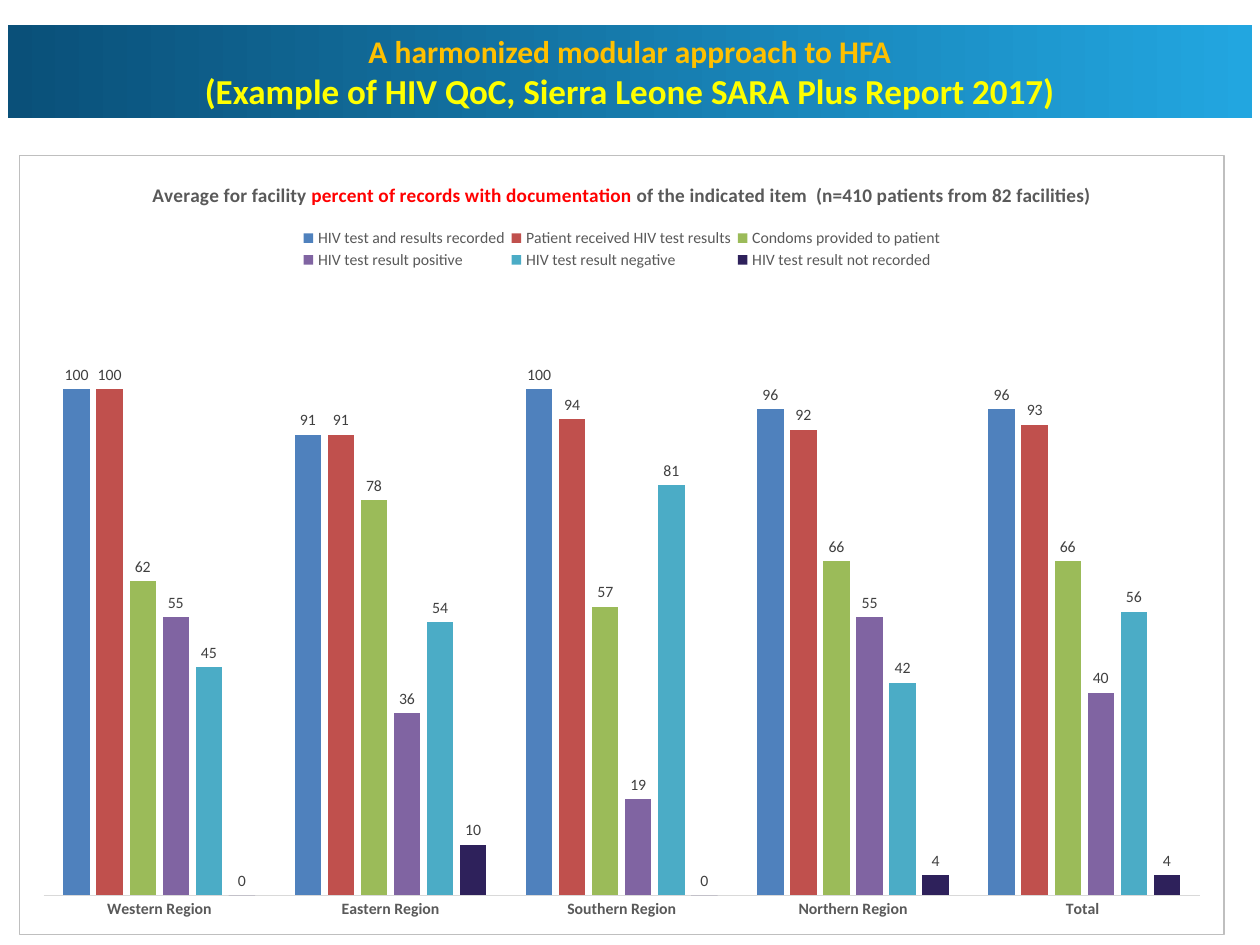
from dataclasses import dataclass

from pptx import Presentation
from pptx.chart.chart import Chart
from pptx.chart.data import CategoryChartData
from pptx.dml.color import RGBColor
from pptx.enum.chart import XL_CHART_TYPE as ChartType
from pptx.enum.chart import XL_LABEL_POSITION as LabelPosition
from pptx.enum.chart import XL_LEGEND_POSITION as LegendPosition
from pptx.enum.chart import XL_TICK_MARK as TickMark
from pptx.enum.text import MSO_ANCHOR as Anchor
from pptx.enum.text import MSO_AUTO_SIZE as AutoSize
from pptx.enum.text import PP_ALIGN as Align
from pptx.oxml import parse_xml
from pptx.oxml.ns import nsdecls, qn
from pptx.util import Inches, Pt


@dataclass(frozen=True)
class Theme:
    font: str = "Calibri"
    banner_start: str = "0A5079"
    banner_end: str = "22A6E0"
    heading: str = "FFC000"
    subheading: str = "FFFF00"
    emphasis: str = "FF0000"
    muted: str = "595959"
    value: str = "404040"
    axis: str = "D9D9D9"
    border: str = "BFBFBF"
    panel: str = "FFFFFF"
    heading_size: float = 18
    subheading_size: float = 20
    chart_title_size: float = 11
    chart_size: float = 10
    label_size: float = 9


@dataclass(frozen=True)
class Indicator:
    name: str
    percents: tuple[int, ...]
    color: str


THEME = Theme()
REGIONS = ("Western Region", "Eastern Region", "Southern Region", "Northern Region", "Total ")
INDICATORS = (
    Indicator("HIV test and results recorded", (100, 91, 100, 96, 96), "4F81BD"),
    Indicator("Patient received HIV test results", (100, 91, 94, 92, 93), "C0504D"),
    Indicator("Condoms provided to patient", (62, 78, 57, 66, 66), "9BBB59"),
    Indicator("HIV test result positive", (55, 36, 19, 55, 40), "8064A2"),
    Indicator("HIV test result negative", (45, 54, 81, 42, 56), "4BACC6"),
    Indicator("HIV test result not recorded", (0, 10, 0, 4, 4), "2E215B"),
)


def format_font(font, *, size: float, color: str, bold: bool = False) -> None:
    font.name = THEME.font
    font.size = Pt(size)
    font.bold = bold
    font.color.rgb = RGBColor.from_string(color)


def add_text(paragraph, text: str, *, size: float, color: str, bold: bool = True) -> None:
    paragraph.alignment = Align.CENTER
    run = paragraph.add_run()
    run.text = text
    format_font(run.font, size=size, color=color, bold=bold)


def layout_xml(x: float, y: float, w: float, h: float, target: str = ""):
    return parse_xml(
        f'<c:layout {nsdecls("c")}><c:manualLayout>{target}'
        '<c:xMode val="edge"/><c:yMode val="edge"/>'
        f'<c:x val="{x}"/><c:y val="{y}"/><c:w val="{w}"/><c:h val="{h}"/>'
        "</c:manualLayout></c:layout>"
    )


def draw_banner(banner) -> None:
    banner.left, banner.top = Inches(0.06), Inches(0.2)
    banner.width, banner.height = Inches(9.88), Inches(0.74)
    banner.fill.gradient()
    banner.fill.gradient_angle = 0
    for stop, color, position in zip(
        banner.fill.gradient_stops, (THEME.banner_start, THEME.banner_end), (0, 1)
    ):
        stop.color.rgb = RGBColor.from_string(color)
        stop.position = position
    frame = banner.text_frame
    frame.auto_size = AutoSize.NONE
    frame.word_wrap = True
    frame.vertical_anchor = Anchor.MIDDLE
    add_text(frame.paragraphs[0], "A harmonized modular approach to HFA",
             size=THEME.heading_size, color=THEME.heading)
    add_text(frame.add_paragraph(), "(Example of HIV QoC, Sierra Leone SARA Plus Report 2017)",
             size=THEME.subheading_size, color=THEME.subheading)


def style_panel(chart: Chart) -> None:
    chart.element.find(qn("c:chart")).addnext(parse_xml(
        f'<c:spPr {nsdecls("c", "a")}>'
        f'<a:solidFill><a:srgbClr val="{THEME.panel}"/></a:solidFill>'
        f'<a:ln w="{Pt(0.75)}"><a:solidFill><a:srgbClr val="{THEME.border}"/></a:solidFill></a:ln>'
        "</c:spPr>"
    ))
    plot_area = chart.element.find(".//" + qn("c:plotArea"))
    for automatic in plot_area.findall(qn("c:layout")):
        plot_area.remove(automatic)
    plot_area.insert(0, layout_xml(0.02, 0.17, 0.96, 0.78, '<c:layoutTarget val="inner"/>'))


def style_legend(chart: Chart) -> None:
    chart.has_legend = True
    legend = chart.legend
    legend.position = LegendPosition.TOP
    legend.include_in_layout = False
    format_font(legend.font, size=THEME.label_size, color=THEME.muted)
    position = chart.element.find(".//" + qn("c:legendPos"))
    for automatic in position.getparent().findall(qn("c:layout")):
        position.getparent().remove(automatic)
    position.addnext(layout_xml(0.23, 0.09, 0.54, 0.06))


def style_axes(chart: Chart) -> None:
    regions, percents = chart.category_axis, chart.value_axis
    regions.major_tick_mark = regions.minor_tick_mark = TickMark.NONE
    regions.format.line.color.rgb = RGBColor.from_string(THEME.axis)
    regions.format.line.width = Pt(0.75)
    format_font(regions.tick_labels.font, size=THEME.label_size, color=THEME.muted, bold=True)
    percents.visible = False
    percents.has_major_gridlines = False
    percents.minimum_scale, percents.maximum_scale = 0, 120


def draw_chart(slide) -> None:
    data = CategoryChartData()
    data.categories = REGIONS
    for indicator in INDICATORS:
        data.add_series(indicator.name, indicator.percents)
    chart = slide.shapes.add_chart(
        ChartType.COLUMN_CLUSTERED, Inches(0.15), Inches(1.23), Inches(9.57), Inches(6.19), data
    ).chart
    format_font(chart.font, size=THEME.chart_size, color="000000")

    chart.has_title = True
    heading = chart.chart_title.text_frame.paragraphs[0]
    for text, color in (
        ("Average for facility ", THEME.muted),
        ("percent of records with documentation", THEME.emphasis),
        (" of the indicated item  (n=410 patients from 82 facilities)", THEME.muted),
    ):
        add_text(heading, text, size=THEME.chart_title_size, color=color)

    columns = chart.plots[0]
    columns.gap_width, columns.overlap = 150, -25
    columns.vary_by_categories = False
    for series, indicator in zip(columns.series, INDICATORS):
        series.format.fill.solid()
        series.format.fill.fore_color.rgb = RGBColor.from_string(indicator.color)
        labels = series.data_labels
        labels.show_value = True
        labels.position = LabelPosition.OUTSIDE_END
        format_font(labels.font, size=THEME.label_size, color=THEME.value)

    style_axes(chart)
    style_legend(chart)
    style_panel(chart)


def main() -> None:
    """Build the slide with its banner and chart of HIV record documentation."""
    deck = Presentation()
    deck.slide_width, deck.slide_height = Inches(10), Inches(7.5)
    slide = deck.slides.add_slide(deck.slide_layouts[5])
    draw_banner(slide.shapes.title)
    draw_chart(slide)
    deck.save("out.pptx")


if __name__ == "__main__":
    main()
